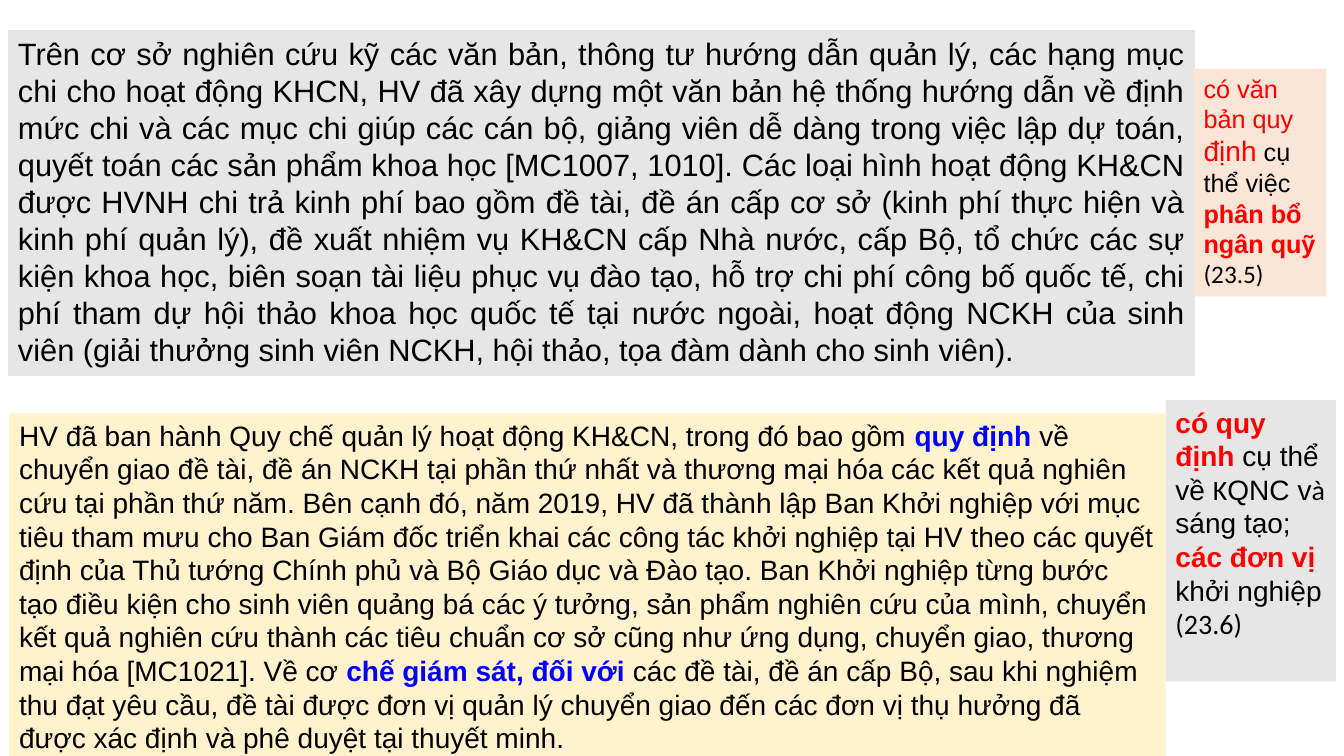
"""Build a slide of two evidence passages, each beside the criterion it answers."""
from pptx import Presentation
from pptx.dml.color import RGBColor
from pptx.enum.text import MSO_AUTO_SIZE as AutoSize, PP_ALIGN as Align
from pptx.util import Inches, Pt


def color(value):
    return RGBColor.from_string(value)


deck = Presentation()
deck.slide_width, deck.slide_height = Inches(13.33), Inches(7.5)
page = deck.slides.add_slide(deck.slide_layouts[6])
column, row = deck.slide_width / 100, deck.slide_height / 100

GRAY, CREAM, PEACH = "E7E6E6", "FFF2CC", "FBE5D6"
plain = {"name": "Arial", "bold": False, "color": "000000"}
calibri = plain | {"name": "Calibri"}
red = plain | {"color": "FF0000"}
red_bold = red | {"bold": True}
blue_bold = red_bold | {"color": "0000FF"}

budget_evidence = [
    ("Trên cơ sở nghiên cứu kỹ các văn bản, thông tư hướng dẫn quản lý, các hạng mục chi cho "
     "hoạt động KHCN, HV đã xây dựng một văn bản hệ thống hướng dẫn về định mức chi và các mục "
     "chi giúp các cán bộ, giảng viên dễ dàng trong việc lập dự toán, quyết toán các sản phẩm "
     "khoa học [MC1007, 1010]. Các loại hình hoạt động KH&CN được HVNH chi trả kinh phí bao gồm "
     "đề tài, đề án cấp cơ sở (kinh phí thực hiện và kinh phí quản lý), đề xuất nhiệm vụ KH&CN "
     "cấp Nhà nước, cấp Bộ, tổ chức các sự kiện khoa học, biên soạn tài liệu phục vụ đào tạo, "
     "hỗ trợ chi phí công bố quốc tế, chi phí tham dự hội thảo khoa học quốc tế tại nước ngoài, "
     "hoạt động NCKH của sinh viên (giải thưởng sinh viên NCKH, hội thảo, tọa đàm dành cho "
     "sinh viên).", plain),
]
startup_evidence = [
    ("HV đã ban hành Quy chế quản lý hoạt động KH&CN, trong đó bao gồm ", plain),
    ("quy định ", blue_bold),
    ("về chuyển giao đề tài, đề án NCKH tại phần thứ nhất và thương mại hóa các kết quả nghiên "
     "cứu tại phần thứ năm. Bên cạnh đó, năm 2019, HV đã thành lập Ban Khởi nghiệp với mục tiêu "
     "tham mưu cho Ban Giám đốc triển khai các công tác khởi nghiệp tại HV theo các quyết định "
     "của Thủ tướng Chính phủ và Bộ Giáo dục và Đào tạo. Ban Khởi nghiệp từng bước tạo điều "
     "kiện cho sinh viên quảng bá các ý tưởng, sản phẩm nghiên cứu của mình, chuyển kết quả "
     "nghiên cứu thành các tiêu chuẩn cơ sở cũng như ứng dụng, chuyển giao, thương mại hóa "
     "[MC1021]. Về cơ ", plain),
    ("chế giám sát, đối với ", blue_bold),
    ("các đề tài, đề án cấp Bộ, sau khi nghiệm thu đạt yêu cầu, đề tài được đơn vị quản lý "
     "chuyển giao đến các đơn vị thụ hưởng đã được xác định và phê duyệt tại thuyết minh.", plain),
]
budget_criterion = [
    ("có văn bản quy ", red),
    ("định", red | {"size": Pt(20)}),
    (" ", red),
    ("cụ thể việc ", plain),
    ("phân bổ ngân quỹ ", red_bold),
    ("(23.5)", calibri),
]
startup_criterion = [
    ("có quy định ", red_bold),
    ("cụ thể về ", plain),
    ("K", calibri),
    ("QNC v", plain),
    ("à ", calibri),
    ("sáng tạo; ", plain),
    ("các đơn vị ", red_bold),
    ("khởi nghiệp ", plain),
    ("(23.6)", calibri),
]

panels = [
    (0.6, 4, 88.3, 45.73, GRAY, 22, Align.JUSTIFY, budget_evidence),
    (0.68, 54.67, 86.05, 46.27, CREAM, 20, Align.LEFT, startup_evidence),
    (88.82, 9.07, 9.83, 30.13, PEACH, 18, Align.LEFT, budget_criterion),
    (86.72, 52.93, 12.68, 37.2, GRAY, 20, Align.LEFT, startup_criterion),
]

for left, top, width, height, fill, size, align, spans in panels:
    box = page.shapes.add_textbox(
        int(left * column), int(top * row), int(width * column), int(height * row))
    box.fill.solid()
    box.fill.fore_color.rgb = color(fill)
    frame = box.text_frame
    frame.word_wrap = True
    frame.auto_size = AutoSize.SHAPE_TO_FIT_TEXT
    para = frame.paragraphs[0]
    para.alignment = align
    for text, look in spans:
        span = para.add_run()
        span.text = text
        span.font.color.rgb = color(look["color"])
        for key, value in ({"size": Pt(size)} | look).items():
            if key != "color":
                setattr(span.font, key, value)

deck.save("out.pptx")
